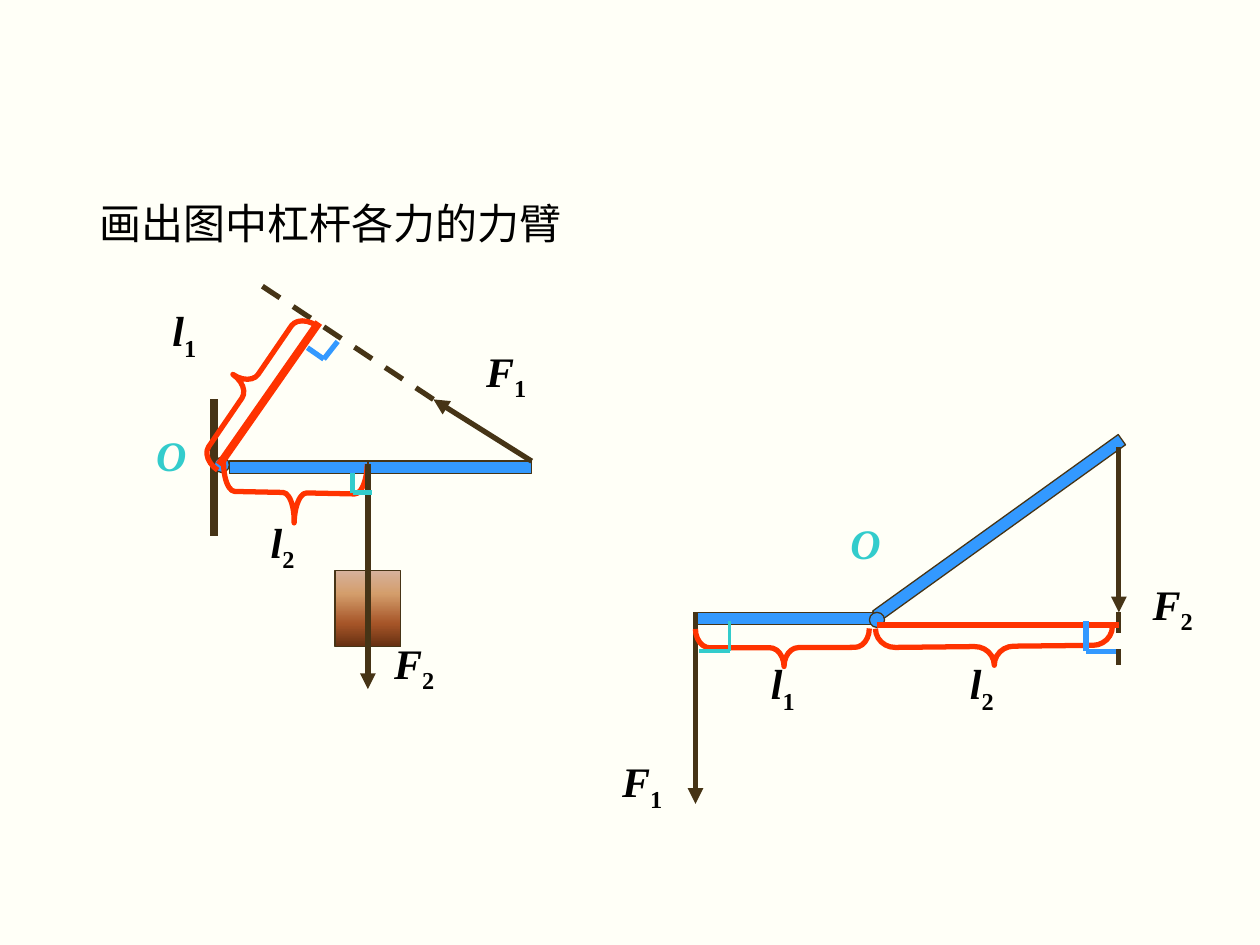
from lxml import etree
from pptx import Presentation
from pptx.dml.color import RGBColor
from pptx.enum.dml import MSO_LINE_DASH_STYLE as Dash
from pptx.enum.shapes import MSO_CONNECTOR as Connector, MSO_SHAPE as Shape
from pptx.enum.text import MSO_ANCHOR as Anchor, MSO_AUTO_SIZE as AutoSize, PP_ALIGN as Align
from pptx.oxml.ns import qn
from pptx.util import Inches, Pt

PAPER, INK, BROWN = "FFFFF7", "000000", "463416"
BLUE, RED, TEAL = "3399FF", "FF3300", "33CCCC"
WOOD = [(0, "D6B19C"), (30, "D49E6C"), (70, "A65528"), (100, "663012")]


def rgb(value):
    return RGBColor.from_string(value)


class LeverSlide:
    font_name = "Times New Roman"
    font_size = 24

    def __init__(self, deck):
        self.page = deck.slides.add_slide(deck.slide_layouts[5])
        background = self.page.background.fill
        background.solid()
        background.fore_color.rgb = rgb(PAPER)

    def style_font(self, font, color):
        font.name = self.font_name
        font.size = Pt(self.font_size)
        font.color.rgb = rgb(color)

    def title(self, text, left, top, width, height):
        box = self.page.shapes.title
        box.left, box.top, box.width, box.height = map(Inches, (left, top, width, height))
        frame = box.text_frame
        frame.text = text
        frame.word_wrap = False
        frame.auto_size = AutoSize.NONE
        frame.vertical_anchor = Anchor.TOP
        para = frame.paragraphs[0]
        para.alignment = Align.LEFT
        self.style_font(para.runs[0].font, INK)

    def label(self, symbol, left, top, width, subscript="", color=INK):
        box = self.page.shapes.add_textbox(*map(Inches, (left, top, width, 0.5)))
        frame = box.text_frame
        frame.word_wrap = False
        para = frame.paragraphs[0]
        para.text = symbol
        if subscript:
            para.add_run().text = subscript
        for span in para.runs:
            self.style_font(span.font, color)
            span.font.bold = True
            span.font.italic = span.text == symbol
        if subscript:
            para.runs[1]._r.get_or_add_rPr().set("baseline", "-25000")

    def line(self, start, end, color=BROWN, weight=3, dashed=False, arrow=False, parent=None):
        shapes = (parent or self.page).shapes
        link = shapes.add_connector(Connector.STRAIGHT, *map(Inches, (*start, *end)))
        link.line.color.rgb = rgb(color)
        link.line.width = Pt(weight)
        if dashed:
            link.line.dash_style = Dash.DASH
        if arrow:
            outline = link.line._get_or_add_ln()
            etree.SubElement(outline, qn("a:tailEnd"), type="triangle")
        etree.SubElement(link._element.spPr, qn("a:effectLst"))
        return link

    def right_angle(self, start, corner, end, color, weight=3):
        group = self.page.shapes.add_group_shape()
        self.line(start, corner, color, weight, parent=group)
        self.line(corner, end, color, weight, parent=group)

    def shape(self, kind, left, top, width, height, rotation=0, color=BROWN, weight=0.75, parent=None):
        shapes = (parent or self.page).shapes
        item = shapes.add_shape(kind, *map(Inches, (left, top, width, height)))
        item.shadow.inherit = False
        item.rotation = rotation
        item.fill.solid()
        item.fill.fore_color.rgb = rgb(BLUE)
        item.line.color.rgb = rgb(color)
        item.line.width = Pt(weight)
        return item

    def beam(self, left, top, width, rotation=0, parent=None):
        self.shape(Shape.RECTANGLE, left, top, width, 0.1, rotation, parent=parent)

    def pivot(self, left, top):
        self.shape(Shape.OVAL, left, top, 0.12, 0.12)

    def block(self, left, top, width, height):
        item = self.shape(Shape.RECTANGLE, left, top, width, height)
        item.fill.gradient()
        item.fill.gradient_angle = 270
        stops = item._element.spPr.find(".//" + qn("a:gsLst"))
        for stop in list(stops):
            stops.remove(stop)
        for percent, color in WOOD:
            stop = etree.SubElement(stops, qn("a:gs"), pos=str(percent * 1000))
            etree.SubElement(stop, qn("a:srgbClr"), val=color)
        return item

    def brace(self, left, top, width, height, rotation, curl, point=0.5, flipped=False):
        item = self.shape(Shape.LEFT_BRACE, left, top, width, height, rotation, RED, 3)
        item.fill.background()
        item.adjustments[0] = curl
        item.adjustments[1] = point
        if flipped:
            item._element.spPr.find(qn("a:xfrm")).set("flipV", "1")


def draw_hanging_block(slide):
    load_x = 2.92
    rope_end = (3.44, 3.17)
    slide.line((1.7, 3.17), (1.7, 4.25), weight=4.5)
    slide.pivot(1.7, 3.63)
    slide.beam(1.82, 3.66, 2.4)
    slide.line((4.22, 3.66), rope_end, arrow=True)
    block = slide.block(load_x - 0.26, 4.53, 0.52, 0.6)
    cord = slide.line((load_x, 3.66), (load_x, 4.53), weight=0.75)
    cord.end_connect(block, 0)
    slide.line(rope_end, (2.05, 2.25), dashed=True)
    slide.line((2.53, 2.56), (1.74, 3.69), RED, 4.5)
    slide.brace(1.82, 2.37, 0.33, 1.39, 34.4, 0.345)
    slide.brace(2.1, 3.34, 0.48, 1.14, 271.2, 0.196)
    slide.line((load_x, 3.68), (load_x, 5.47), arrow=True)
    slide.right_angle((2.44, 2.76), (2.57, 2.85), (2.68, 2.71), BLUE)
    slide.right_angle((2.8, 3.75), (2.8, 3.91), (2.95, 3.91), TEAL)
    slide.label("F", 3.76, 2.69, 0.53, "1")
    slide.label("F", 3.03, 5.01, 0.53, "2")
    slide.label("l", 1.27, 2.37, 0.4, "1")
    slide.label("l", 2.05, 4.05, 0.4, "2")
    slide.label("O", 1.14, 3.36, 0.71, color=TEAL)


def draw_bent_lever(slide):
    left_x, pivot_x, right_x, beam_y = 5.52, 6.96, 8.88, 4.86
    lever = slide.page.shapes.add_group_shape()
    slide.beam(left_x, beam_y, pivot_x - left_x, parent=lever)
    slide.beam(6.73, 4.14, 2.4, 324.3, parent=lever)
    slide.pivot(pivot_x - 0.06, beam_y)
    slide.line((left_x, beam_y), (left_x, 6.38), arrow=True)
    slide.line((right_x, 3.55), (right_x, beam_y), arrow=True)
    slide.brace(6.06, 4.45, 0.3, 1.38, 269.8, 0.386, 0.491, flipped=True)
    slide.line((right_x, beam_y), (right_x, 5.28), dashed=True)
    slide.line((pivot_x, 4.96), (right_x, 4.96), RED)
    slide.brace(7.74, 4.19, 0.3, 1.88, 269.4, 0.517)
    slide.right_angle((5.55, 5.17), (5.79, 5.17), (5.79, 4.93), TEAL, 2.25)
    slide.right_angle((8.62, 4.93), (8.62, 5.17), (8.86, 5.17), BLUE)
    slide.label("F", 4.84, 5.95, 0.53, "1")
    slide.label("F", 9.05, 4.54, 0.53, "2")
    slide.label("l", 6.02, 5.17, 0.4, "1")
    slide.label("l", 7.6, 5.17, 0.4, "2")
    slide.label("O", 6.65, 4.06, 0.44, color=TEAL)


def main():
    deck = Presentation()
    deck.slide_width, deck.slide_height = Inches(10), Inches(7.5)
    slide = LeverSlide(deck)
    slide.title("画出图中杠杆各力的力臂", 0.69, 1.52, 3.87, 0.5)
    draw_hanging_block(slide)
    draw_bent_lever(slide)
    deck.save("out.pptx")


if __name__ == "__main__":
    main()
